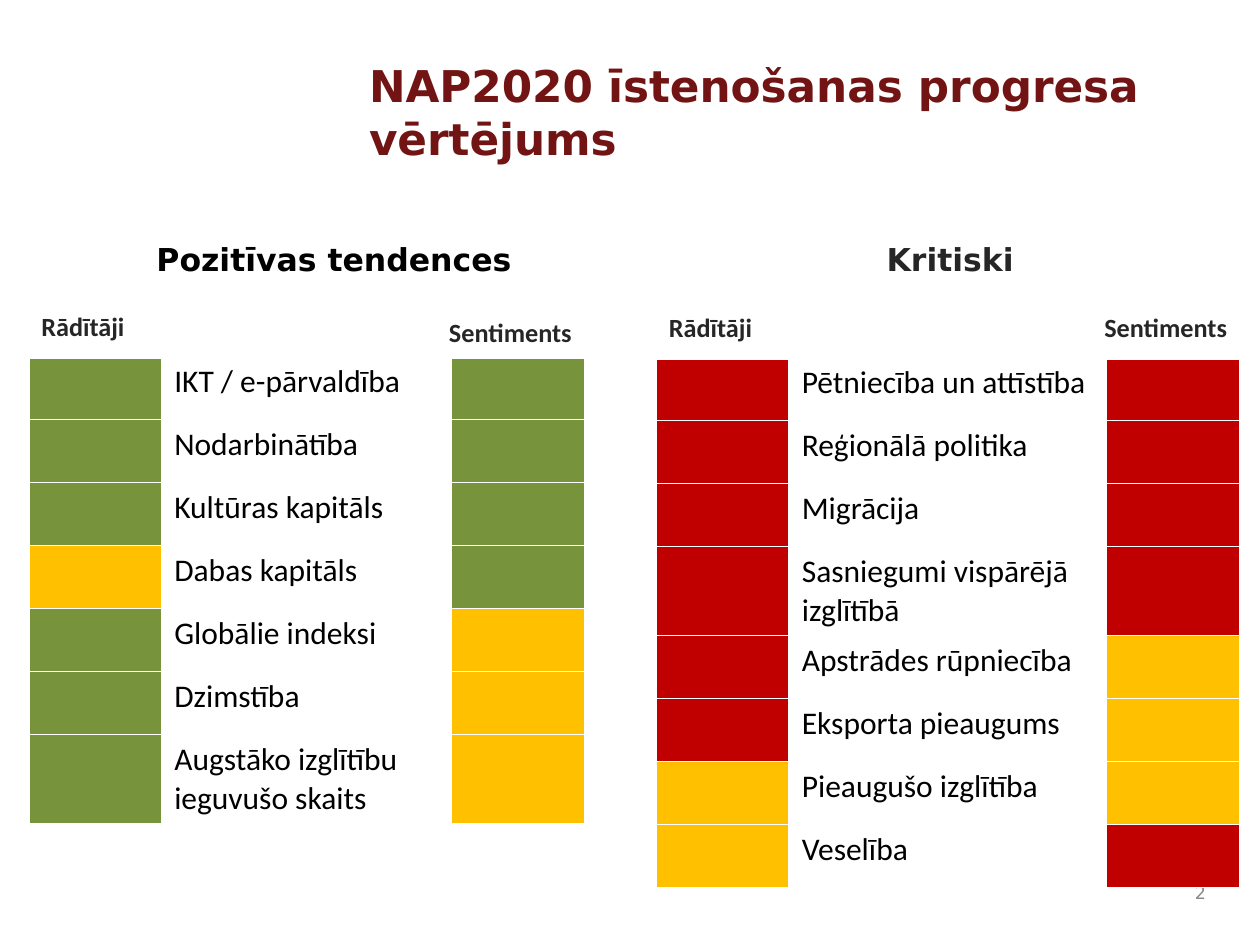
from lxml.etree import SubElement
from pptx import Presentation
from pptx.dml.color import RGBColor
from pptx.enum.text import MSO_ANCHOR, PP_ALIGN
from pptx.oxml.ns import qn
from pptx.util import Cm, Pt

# Content: (indicator colour, label, sentiment colour)
TITLE = "NAP2020 īstenošanas progresa vērtējums"
PAGE_NUMBER = "2"
HEADERS = ("Rādītāji", "Sentiments")
POSITIVE = [
    ("green", "IKT / e-pārvaldība", "green"),
    ("green", "Nodarbinātība", "green"),
    ("green", "Kultūras kapitāls", "green"),
    ("amber", "Dabas kapitāls", "green"),
    ("green", "Globālie indeksi", "amber"),
    ("green", "Dzimstība", "amber"),
    ("green", "Augstāko izglītību ieguvušo skaits", "amber"),
]
CRITICAL = [
    ("red", "Pētniecība un attīstība", "red"),
    ("red", "Reģionālā politika", "red"),
    ("red", "Migrācija", "red"),
    ("red", "Sasniegumi vispārējā izglītībā", "red"),
    ("red", "Apstrādes rūpniecība", "amber"),
    ("red", "Eksporta pieaugums", "amber"),
    ("amber", "Pieaugušo izglītība", "amber"),
    ("amber", "Veselība", "red"),
]

# Tables: place, header height, label width, bottom margins of the header cells
TABLES = [
    {"rows": POSITIVE, "left": 0.58, "top": 4.14, "header": 3.05,
     "label": 5.84, "margins": (0.27, 0.15), "fill": None},
    {"rows": CRITICAL, "left": 13.23, "top": 6.17, "header": 1.03,
     "label": 6.4, "margins": (0.27, 0.27), "fill": "white"},
]
HEADINGS = [("Pozitīvas tendences", 1.12, "black"), ("Kritiski", 13.54, "dark")]
SWATCH_WIDTH = 2.68
ROW_HEIGHT, TALL_ROW_HEIGHT = 1.27, 1.8
LONG_LABEL = 25  # longer labels take two lines

THEME = {
    "colors": {"green": "77933C", "amber": "FFC000", "red": "C00000", "white": "FFFFFF",
               "black": "000000", "dark": "262626", "title": "721414", "grey": "898989"},
    "title": {"name": "DejaVu Sans", "size": Pt(25), "bold": True},
    "heading": {"name": "DejaVu Sans", "size": Pt(18), "bold": True},
    "number": {"name": "DejaVu Sans", "size": Pt(10), "bold": False},
    "header": {"name": "Calibri", "size": Pt(15), "bold": True},
    "label": {"name": "Calibri", "size": Pt(18), "bold": False},
}


def color(name):
    return RGBColor.from_string(THEME["colors"][name])


def write(frame, text, style, ink, align=PP_ALIGN.LEFT):
    para = frame.paragraphs[0]
    para.alignment = align
    span = para.add_run()
    span.text = text
    for key, value in THEME[style].items():
        setattr(span.font, key, value)
    span.font.color.rgb = color(ink)


def add_text(page, place, text, style, ink, align=PP_ALIGN.LEFT, anchor=MSO_ANCHOR.TOP):
    box = page.shapes.add_textbox(*map(Cm, place))
    frame = box.text_frame
    frame.word_wrap = True
    frame.vertical_anchor = anchor
    write(frame, text, style, ink, align)


def style_cell(cell, fill, bottom_width=1):
    properties = cell._tc.get_or_add_tcPr()
    for side, width in (("L", 1), ("R", 1), ("T", 1), ("B", bottom_width)):
        line = SubElement(properties, qn(f"a:ln{side}"), w=str(Pt(width)))
        solid = SubElement(line, qn("a:solidFill"))
        SubElement(solid, qn("a:srgbClr"), val=THEME["colors"]["white"])
    if fill:
        cell.fill.solid()
        cell.fill.fore_color.rgb = color(fill)
    else:
        cell.fill.background()


def add_rating_table(page, plan):
    widths = [SWATCH_WIDTH, plan["label"], SWATCH_WIDTH]
    heights = [plan["header"]] + [
        TALL_ROW_HEIGHT if len(label) > LONG_LABEL else ROW_HEIGHT
        for _, label, _ in plan["rows"]
    ]
    place = (plan["left"], plan["top"], sum(widths), sum(heights))
    table = page.shapes.add_table(len(heights), len(widths), *map(Cm, place)).table
    table.first_row = table.horz_banding = False
    for column, width in zip(table.columns, widths):
        column.width = Cm(width)
    for row, height in zip(table.rows, heights):
        row.height = Cm(height)

    # Header row
    table.cell(0, 1).merge(table.cell(0, 2))
    for index in range(3):
        style_cell(table.cell(0, index), plan["fill"], bottom_width=3)
    for index, align in enumerate((PP_ALIGN.LEFT, PP_ALIGN.RIGHT)):
        cell = table.cell(0, index)
        cell.vertical_anchor = MSO_ANCHOR.BOTTOM
        cell.margin_bottom = Cm(plan["margins"][index])
        write(cell.text_frame, HEADERS[index], "header", "dark", align)

    # Rating rows
    for number, (indicator, label, sentiment) in enumerate(plan["rows"], start=1):
        for index, fill in enumerate((indicator, None, sentiment)):
            style_cell(table.cell(number, index), fill)
        write(table.cell(number, 1).text_frame, label, "label", "black")


def main():
    deck = Presentation()
    deck.slide_width, deck.slide_height = Cm(25.4), Cm(19.05)
    page = deck.slides.add_slide(deck.slide_layouts[6])

    # Title and page number
    add_text(page, (7.19, 1.07, 16.94, 2.87), TITLE, "title", "title")
    add_text(page, (23.37, 17.58, 1.19, 0.84), PAGE_NUMBER, "number", "grey",
             PP_ALIGN.RIGHT, MSO_ANCHOR.MIDDLE)

    # Rating tables, then the headings above them
    for plan in TABLES:
        add_rating_table(page, plan)
    for text, left, ink in HEADINGS:
        add_text(page, (left, 4.72, 11.23, 1.78), text, "heading", ink, PP_ALIGN.CENTER)

    deck.save("out.pptx")


if __name__ == "__main__":
    main()
